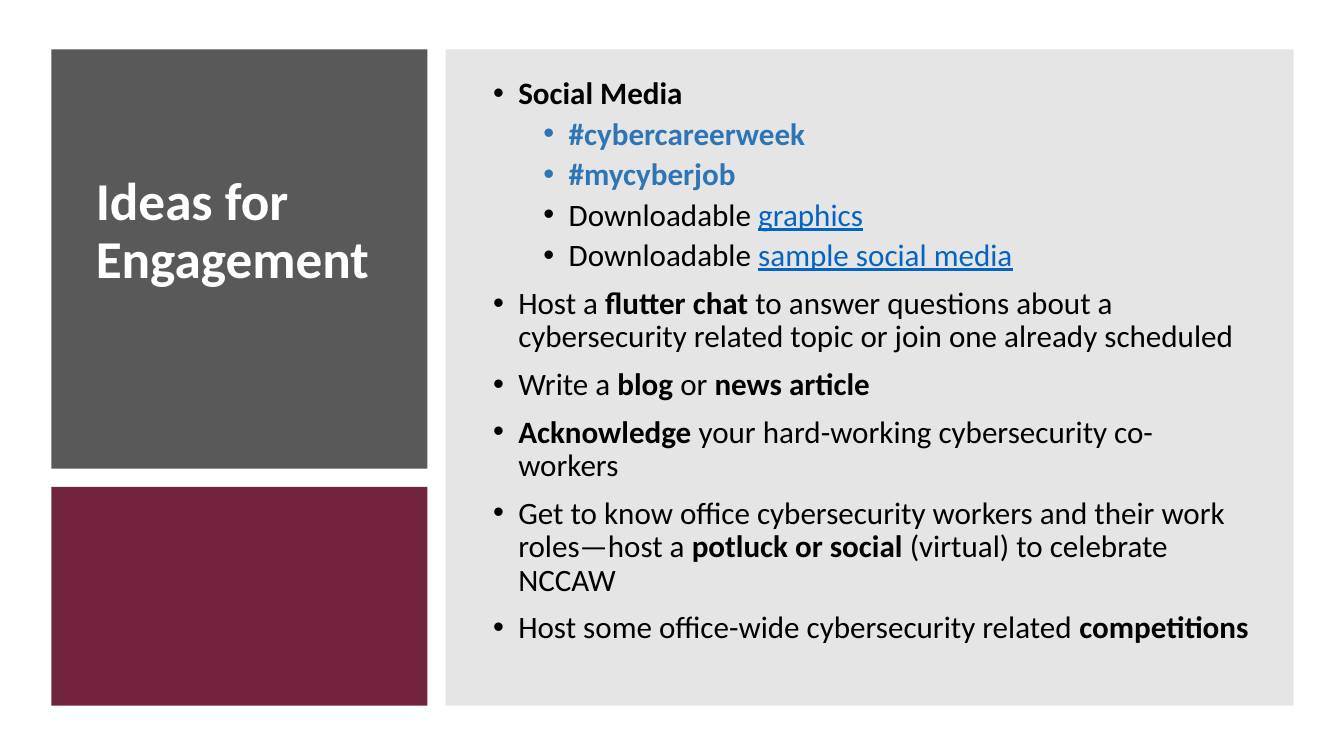
from lxml.etree import SubElement
from pptx import Presentation
from pptx.dml.color import RGBColor
from pptx.enum.shapes import MSO_SHAPE
from pptx.enum.text import MSO_ANCHOR, MSO_AUTO_SIZE, PP_ALIGN
from pptx.oxml.ns import qn
from pptx.util import Inches, Pt

FONT = "Calibri"
BLACK, BLUE, LINK = "000000", "2E75B6", "0563C1"

# Panel grid: two columns, the left one split into two rows
LEFT, TOP, GAP = 0.51, 0.49, 0.18
NARROW, WIDE = 3.73, 8.41
UPPER, LOWER = 4.16, 2.17
FULL = UPPER + GAP + LOWER

# Each item: level, then runs of (text, style); b = bold, h = hashtag, u = link
IDEAS = [
    (0, [("Social Media", "b")]),
    (1, [("#cybercareerweek", "h")]),
    (1, [("#mycyberjob", "h")]),
    (1, [("Downloadable ", ""), ("graphics", "u")]),
    (1, [("Downloadable ", ""), ("sample social media", "u")]),
    (0, [("Host a ", ""), ("flutter chat ", "b"),
         ("to answer questions about a cybersecurity related topic "
          "or join one already scheduled", "")]),
    (0, [("Write a ", ""), ("blog", "b"), (" or ", ""), ("news article", "b")]),
    (0, [("Acknowledge", "b"), (" your hard-working cybersecurity co-workers", "")]),
    (0, [("Get to know office cybersecurity workers and their work roles—host a ", ""),
         ("potluck or social ", "b"), ("(virtual) to celebrate NCCAW", "")]),
    (0, [("Host some office-wide cybersecurity related ", ""), ("competitions", "b")]),
]


def paint(fmt, color, alpha=100):
    """Fill a shape with a hex colour at a percentage of opacity."""
    fmt.solid()
    fmt.fore_color.rgb = RGBColor.from_string(color)
    if alpha < 100:
        tone = fmt._xPr.find(qn("a:solidFill"))[0]
        SubElement(tone, qn("a:alpha"), val=str(alpha * 1000))


def place(shape, box):
    shape.left, shape.top, shape.width, shape.height = map(Inches, box)


def panel(slide, box, color, alpha=100):
    rect = slide.shapes.add_shape(MSO_SHAPE.RECTANGLE, *map(Inches, box))
    rect.shadow.inherit = False
    rect.line.fill.background()
    paint(rect.fill, color, alpha)


def raise_up(slide, holder):
    """Bring a placeholder in front of the panels."""
    slide.shapes._spTree.append(holder._element)


def heading(slide, box):
    x, y, w, h = box
    panel(slide, box, "595959")
    title = slide.shapes.title
    raise_up(slide, title)
    place(title, (x + 0.34, y + 0.33, w - 0.62, h - 0.62))
    paint(title.fill, "595959")
    frame = title.text_frame
    frame.text = "Ideas for Engagement"
    frame.word_wrap = True
    frame.auto_size = MSO_AUTO_SIZE.NONE
    frame.vertical_anchor = MSO_ANCHOR.MIDDLE
    frame.margin_bottom = Inches(0.62)
    para = frame.paragraphs[0]
    para.alignment = PP_ALIGN.LEFT
    para.line_spacing = 0.9
    para.font.name, para.font.size, para.font.bold = FONT, Pt(38), True
    paint(para.font.fill, "FFFFFF")


def bullet(para, level):
    props = para._p.get_or_add_pPr()
    props.set("marL", str(Inches(0.25 + 0.5 * level)))
    props.set("indent", str(Inches(-0.25)))
    SubElement(props, qn("a:buFont"), typeface="Arial")
    SubElement(props, qn("a:buChar"), char="•")


def write(para, level, runs):
    para.level = level
    para.alignment = PP_ALIGN.LEFT
    para.line_spacing = 0.9
    para.space_before = Pt(5 if level else 10)
    bullet(para, level)
    para.font.name, para.font.size = FONT, Pt(22.2)
    for text, style in runs:
        run = para.add_run()
        run.text = text
        run.font.bold = style in ("b", "h")
        run.font.underline = style == "u"
        paint(run.font.fill, {"h": BLUE, "u": LINK}.get(style, BLACK))


def ideas(slide, box):
    x, y, w, h = box
    panel(slide, box, "808080", 20)
    body = slide.placeholders[1]
    raise_up(slide, body)
    place(body, (x + 0.37, y + 0.26, w - 0.71, h - 0.52))
    frame = body.text_frame
    frame.word_wrap = True
    frame.auto_size = MSO_AUTO_SIZE.NONE
    frame.vertical_anchor = MSO_ANCHOR.TOP
    frame.margin_top = Inches(0.02)
    for i, (level, runs) in enumerate(IDEAS):
        para = frame.add_paragraph() if i else frame.paragraphs[0]
        write(para, level, runs)
    frame.paragraphs[0].space_before = Pt(0)


def main():
    deck = Presentation()
    deck.slide_width, deck.slide_height = Inches(13.33), Inches(7.5)
    slide = deck.slides.add_slide(deck.slide_layouts[1])
    heading(slide, (LEFT, TOP, NARROW, UPPER))
    panel(slide, (LEFT, TOP + UPPER + GAP, NARROW, LOWER), "6B1935", 95)
    ideas(slide, (LEFT + NARROW + GAP, TOP, WIDE, FULL))
    deck.save("out.pptx")


if __name__ == "__main__":
    main()
